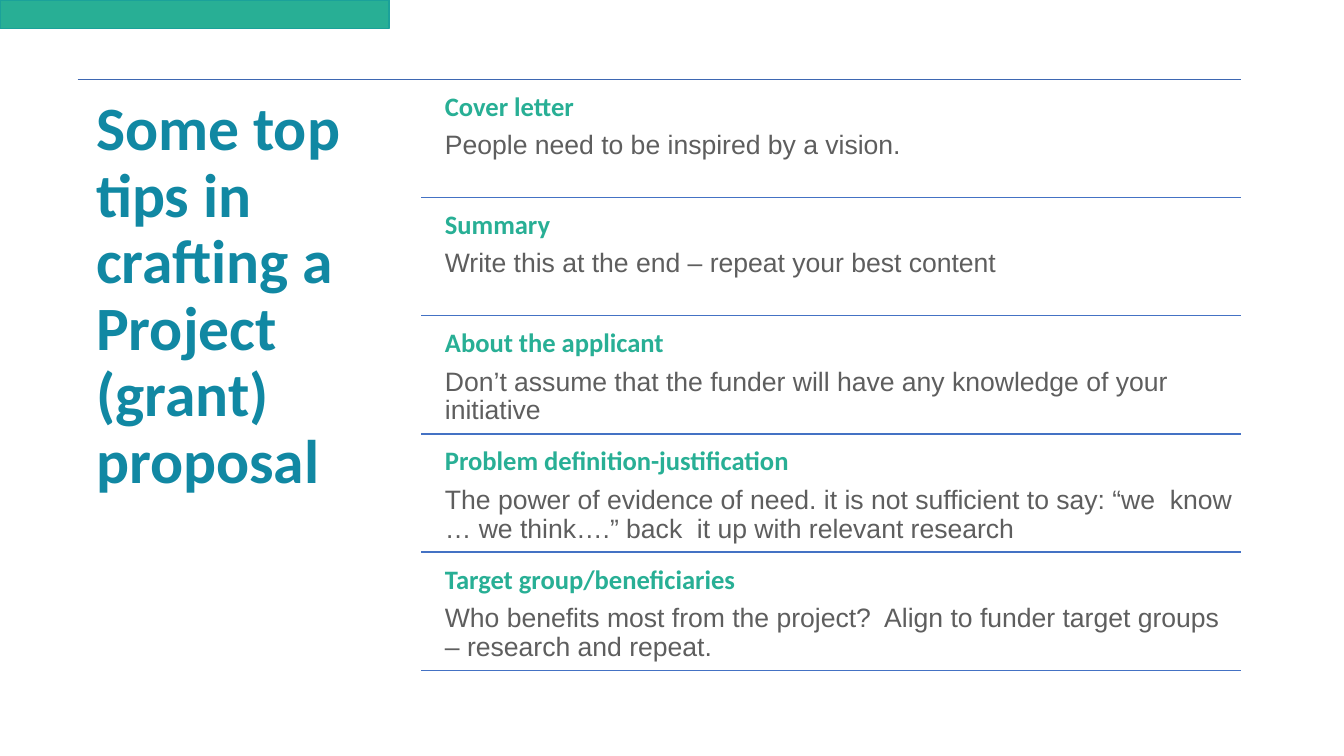
from dataclasses import dataclass

from lxml.etree import SubElement
from pptx import Presentation
from pptx.dml.color import RGBColor as RGB
from pptx.enum.shapes import MSO_CONNECTOR as Connector, MSO_SHAPE as Shape
from pptx.enum.text import MSO_ANCHOR as Anchor, PP_ALIGN as Align
from pptx.oxml.ns import qn
from pptx.util import Pt


@dataclass(frozen=True)
class Theme:
    accent: RGB = RGB.from_string("28AF95")
    accent_edge: RGB = RGB.from_string("1BA19A")
    title: RGB = RGB.from_string("1188A3")
    body: RGB = RGB.from_string("5E5E5E")
    top_rule: RGB = RGB.from_string("3E67B2")
    tip_rule: RGB = RGB.from_string("4472C4")
    title_size: int = 44
    tip_size: int = 19
    heading_font: str = "Calibri"
    body_font: str = "Arial"


@dataclass(frozen=True)
class Box:
    left: float
    top: float
    width: float
    height: float

    @property
    def points(self):
        return Pt(self.left), Pt(self.top), Pt(self.width), Pt(self.height)


THEME = Theme()

TITLE = "Some top tips in crafting a Project (grant) proposal"
TIPS = [
    ("Cover letter", "People need to be inspired by a vision."),
    ("Summary", "Write this at the end – repeat your best content"),
    (
        "About the applicant",
        "Don’t assume that the funder will have any knowledge of your initiative",
    ),
    (
        "Problem definition-justification",
        "The power of evidence of need. it is not sufficient to say: "
        "“we  know … we think….” back \tit up with relevant research",
    ),
    (
        "Target group/beneficiaries",
        "Who benefits most from the project?  "
        "Align to funder target groups – research and repeat.",
    ),
]


def add_rule(slide, left, top, width, color):
    rule = slide.shapes.add_connector(
        Connector.STRAIGHT, Pt(left), Pt(top), Pt(left + width), Pt(top)
    )
    rule.line.color.rgb = color
    rule.line.width = Pt(1)
    SubElement(rule._element.spPr, qn("a:effectLst"))


def add_text(slide, box, inset, entries):
    frame = slide.shapes.add_textbox(*box.points).text_frame
    frame.word_wrap = True
    frame.vertical_anchor = Anchor.TOP
    frame.margin_left = frame.margin_right = Pt(inset)
    frame.margin_top = frame.margin_bottom = Pt(inset)
    for index, (wording, font_name, size, color, bold) in enumerate(entries):
        paragraph = frame.add_paragraph() if index else frame.paragraphs[0]
        paragraph.text = wording
        paragraph.alignment = Align.LEFT
        paragraph.line_spacing = 0.9
        paragraph.space_after = Pt(7)
        paragraph.font.name = font_name
        paragraph.font.size = Pt(size)
        paragraph.font.color.rgb = color
        paragraph.font.bold = bold


def add_corner_band(slide, box):
    band = slide.shapes.add_shape(Shape.RECTANGLE, *box.points)
    band.shadow.inherit = False
    band.fill.solid()
    band.fill.fore_color.rgb = THEME.accent
    band.line.color.rgb = THEME.accent_edge
    band.line.width = Pt(1)


def add_title(slide, box):
    title = (TITLE, THEME.heading_font, THEME.title_size, THEME.title, True)
    add_text(slide, box, 13.2, [title])


def add_tips(slide, box):
    pitch = box.height / len(TIPS)
    indent, drop = 10.8, 4
    for index, (heading, advice) in enumerate(TIPS):
        top = box.top + index * pitch
        tip_box = Box(
            box.left + indent, top + drop, box.width - indent, pitch - drop
        )
        add_text(slide, tip_box, 6, [
            (heading, THEME.heading_font, THEME.tip_size, THEME.accent, True),
            (advice, THEME.body_font, THEME.tip_size, THEME.body, False),
        ])
        add_rule(slide, box.left, top + pitch, box.width, THEME.tip_rule)


def add_tips_slide(deck, box):
    slide = deck.slides.add_slide(deck.slide_layouts[6])
    title_width, tips_offset = 245.5, 245.6
    add_corner_band(slide, Box(0, 0, 278, 20.2))
    add_rule(slide, box.left, box.top, box.width, THEME.top_rule)
    add_title(slide, Box(box.left, box.top, title_width, box.height))
    add_tips(slide, Box(
        box.left + tips_offset, box.top, box.width - tips_offset, box.height - 4.8
    ))


def main():
    deck = Presentation()
    deck.slide_width, deck.slide_height = Pt(960), Pt(540)
    add_tips_slide(deck, Box(55.4, 56.6, 831.4, 427))
    deck.save("out.pptx")


if __name__ == "__main__":
    main()
